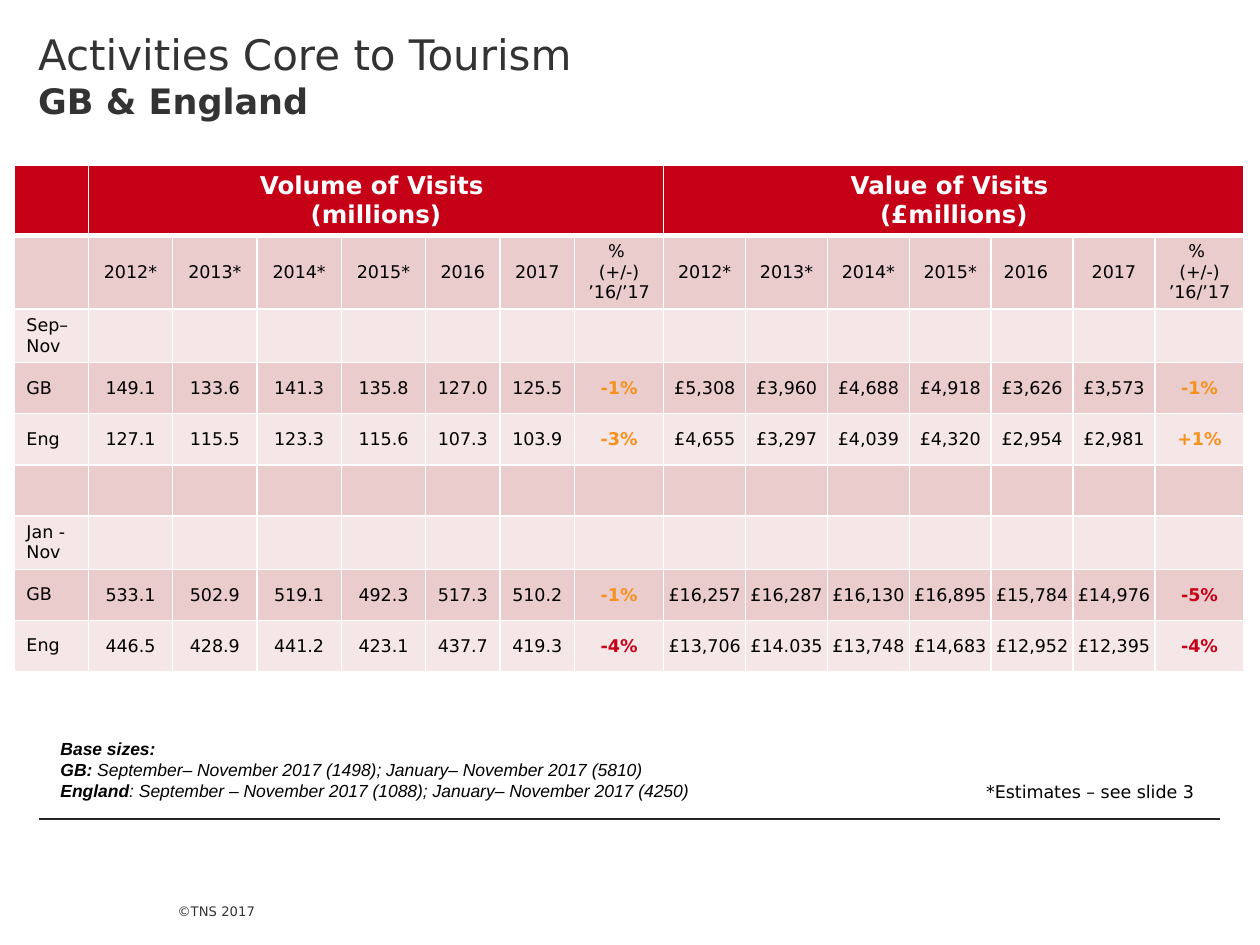
"""Build the tourism activities slide with its volume and value table."""
from dataclasses import dataclass

import pptx
import pptx.dml.color
import pptx.enum.shapes
import pptx.enum.text
import pptx.oxml
import pptx.oxml.ns
import pptx.util
from pptx.util import Cm

SANS = "DejaVu Sans"
RED, ORANGE, BLACK, WHITE, GREY = "C50017", "F7911E", "000000", "FFFFFF", "333333"
BANDS = ("EACCCC", "F5E7E8")
ALIGN = pptx.enum.text.PP_ALIGN
ANCHOR = pptx.enum.text.MSO_ANCHOR
FIT = pptx.enum.text.MSO_AUTO_SIZE
YEARS = ["2012*", "2013*", "2014*", "2015*", "2016", "2017", "% \n(+/-) ’16/’17"]
COLUMN_WIDTHS = [1.5] + [1.7] * 4 + [1.5] * 2 + [1.8] + [1.65] * 6 + [1.8]
ROW_HEIGHT = 1.03
VALUE_START = 8


@dataclass
class Span:
    text: str
    size: float = 10
    color: str = BLACK
    bold: bool = False
    italic: bool = False
    font: str = SANS


@dataclass
class Area:
    left: float
    top: float
    width: float
    height: float


@dataclass
class Row:
    label: str
    values: str = ""
    change_colors: tuple[str, str] = (ORANGE, ORANGE)


ROWS = [
    Row("Sep– Nov"),
    Row("GB", "149.1 133.6 141.3 135.8 127.0 125.5 -1% "
        "£5,308 £3,960 £4,688 £4,918 £3,626 £3,573 -1%"),
    Row("Eng", "127.1 115.5 123.3 115.6 107.3 103.9 -3% "
        "£4,655 £3,297 £4,039 £4,320 £2,954 £2,981 +1%"),
    Row(""),
    Row("Jan - Nov"),
    Row("GB", "533.1 502.9 519.1 492.3 517.3 510.2 -1% "
        "£16,257 £16,287 £16,130 £16,895 £15,784 £14,976 -5%", (ORANGE, RED)),
    Row("Eng", "446.5 428.9 441.2 423.1 437.7 419.3 -4% "
        "£13,706 £14.035 £13,748 £14,683 £12,952 £12,395 -4%", (RED, RED)),
]


def rgb(color: str) -> pptx.dml.color.RGBColor:
    """Turn a hex string into a colour."""
    return pptx.dml.color.RGBColor.from_string(color)


def add_span(para, span: Span) -> None:
    """Add one formatted run to a paragraph."""
    run = para.add_run()
    run.text = span.text
    run.font.name = span.font
    run.font.size = pptx.util.Pt(span.size)
    run.font.bold = span.bold
    run.font.italic = span.italic
    run.font.color.rgb = rgb(span.color)


def set_margins(frame, left: float, top: float, right: float, bottom: float) -> None:
    """Set the four insets of a text frame or cell in centimetres."""
    frame.margin_left, frame.margin_top = Cm(left), Cm(top)
    frame.margin_right, frame.margin_bottom = Cm(right), Cm(bottom)


def add_box(page, area: Area, wrap: bool = True):
    """Add a text box and return its text frame."""
    box = page.shapes.add_textbox(Cm(area.left), Cm(area.top), Cm(area.width), Cm(area.height))
    box.text_frame.word_wrap = wrap
    return box.text_frame


def style_cell(cell, fill: str, top: float, bottom: float) -> None:
    """Give a cell white borders and a solid fill."""
    properties = cell._tc.get_or_add_tcPr()
    for side, points in (("L", 1), ("R", 1), ("T", top), ("B", bottom)):
        properties.append(pptx.oxml.parse_xml(
            f'<a:ln{side} {pptx.oxml.ns.nsdecls("a")} w="{pptx.util.Pt(points)}">'
            f'<a:solidFill><a:srgbClr val="{WHITE}"/></a:solidFill></a:ln{side}>'))
    cell.fill.solid()
    cell.fill.fore_color.rgb = rgb(fill)


def write_cell(cell, span: Span, align=ALIGN.CENTER, anchor=ANCHOR.MIDDLE) -> None:
    """Write a cell, one paragraph for each line of the span."""
    cell.vertical_anchor = anchor
    for index, line in enumerate(span.text.split("\n")):
        frame = cell.text_frame
        para = frame.add_paragraph() if index else frame.paragraphs[0]
        para.alignment = align
        add_span(para, Span(line, span.size, span.color, span.bold))


def write_data_row(table, number: int, row: Row) -> None:
    """Write the label, the figures and the two changes of one row."""
    if row.label:
        anchor = ANCHOR.MIDDLE if number > 2 else ANCHOR.TOP
        write_cell(table.cell(number, 0), Span(row.label), ALIGN.LEFT, anchor)
    for column, value in enumerate(row.values.split(), 1):
        cell = table.cell(number, column)
        set_margins(cell, 0.02, 0.02, 0.02, 0)
        change = value.endswith("%")
        color = row.change_colors[column >= VALUE_START] if change else BLACK
        write_cell(cell, Span(value, color=color, bold=change))


def add_visits_table(page) -> None:
    """Add the table of visits by year."""
    count = len(ROWS) + 2
    table = page.shapes.add_table(count, len(COLUMN_WIDTHS), Cm(0.28), Cm(3.33),
                                  Cm(sum(COLUMN_WIDTHS)), Cm(ROW_HEIGHT * count)).table
    for column, width in zip(table.columns, COLUMN_WIDTHS):
        column.width = Cm(width)
    for number, row in enumerate(table.rows):
        row.height = Cm(ROW_HEIGHT)
        fill = BANDS[(number - 1) % 2] if number else RED
        for cell in row.cells:
            style_cell(cell, fill, 3 if number == 1 else 1, 1 if number else 3)
    headings = ((1, "Volume of Visits \n(millions)"),
                (VALUE_START, "Value of Visits \n(£millions)"))
    for start, heading in headings:
        table.cell(0, start).merge(table.cell(0, start + len(YEARS) - 1))
        write_cell(table.cell(0, start), Span(heading, 14, WHITE, True), anchor=ANCHOR.TOP)
        for offset, year in enumerate(YEARS):
            left = start == VALUE_START and year == "2016"
            write_cell(table.cell(1, start + offset), Span(year),
                       ALIGN.LEFT if left else ALIGN.CENTER)
    for number, row in enumerate(ROWS, 2):
        write_data_row(table, number, row)


def format_title(page) -> None:
    """Place and fill the title placeholder."""
    title = page.shapes.title
    title.left, title.top, title.width, title.height = Cm(0), Cm(0), Cm(14.1), Cm(3.58)
    frame = title.text_frame
    frame.auto_size = FIT.NONE
    frame.vertical_anchor = ANCHOR.TOP
    set_margins(frame, 0.77, 0.58, 0.77, 0)
    para = frame.paragraphs[0]
    para.alignment = ALIGN.LEFT
    add_span(para, Span("Activities Core to Tourism", 24, GREY))
    para.add_line_break()
    add_span(para, Span("GB & England", 20, GREY, True))


def add_base_sizes(page) -> None:
    """Add the note on sample sizes."""
    frame = add_box(page, Area(0.97, 14.75, 21.44, 1.55))
    lines = (("Base sizes: ", ""),
             ("GB:", " September– November 2017 (1498); January– November 2017 (5810)"),
             ("England", ": September – November 2017 (1088); January– November 2017 (4250)"))
    for index, (lead, detail) in enumerate(lines):
        para = frame.add_paragraph() if index else frame.paragraphs[0]
        add_span(para, Span(lead, bold=True, italic=True, font="Arial"))
        if detail:
            add_span(para, Span(detail, italic=True, font="Arial"))


def add_footer(page) -> None:
    """Add the rule, the estimates note and the copyright line."""
    rule = page.shapes.add_connector(pptx.enum.shapes.MSO_CONNECTOR.STRAIGHT,
                                     Cm(0.79), Cm(16.51), Cm(24.59), Cm(16.51))
    rule.line.color.rgb = rgb("262626")
    rule.line.width = pptx.util.Pt(0.75)
    rule._element.spPr.append(pptx.oxml.parse_xml(
        f'<a:effectLst {pptx.oxml.ns.nsdecls("a")}/>'))
    estimates = add_box(page, Area(19.63, 15.62, 4.88, 0.68), wrap=False)
    add_span(estimates.paragraphs[0], Span("*Estimates – see slide 3"))
    copyright_line = add_box(page, Area(3.58, 17.58, 2.1, 1.47))
    copyright_line.vertical_anchor = ANCHOR.BOTTOM
    set_margins(copyright_line, 0, 0, 0, 0.74)
    add_span(copyright_line.paragraphs[0], Span("©TNS 2017", 7.5, GREY))


def main() -> None:
    """Build and save the deck."""
    deck = pptx.Presentation()
    deck.slide_width, deck.slide_height = Cm(25.4), Cm(19.05)
    page = deck.slides.add_slide(deck.slide_layouts[5])
    format_title(page)
    add_visits_table(page)
    add_base_sizes(page)
    add_footer(page)
    deck.save("out.pptx")


if __name__ == "__main__":
    main()
